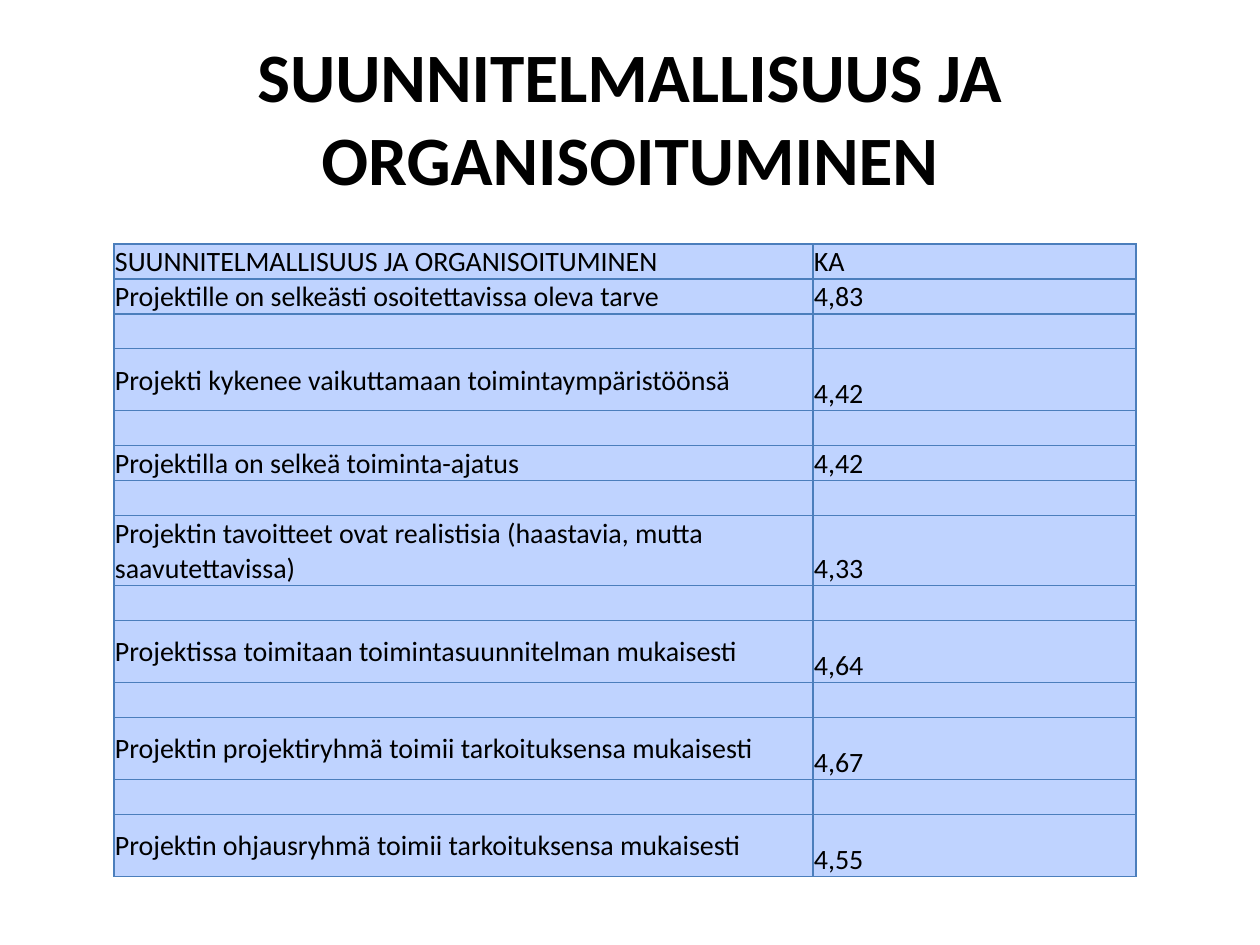
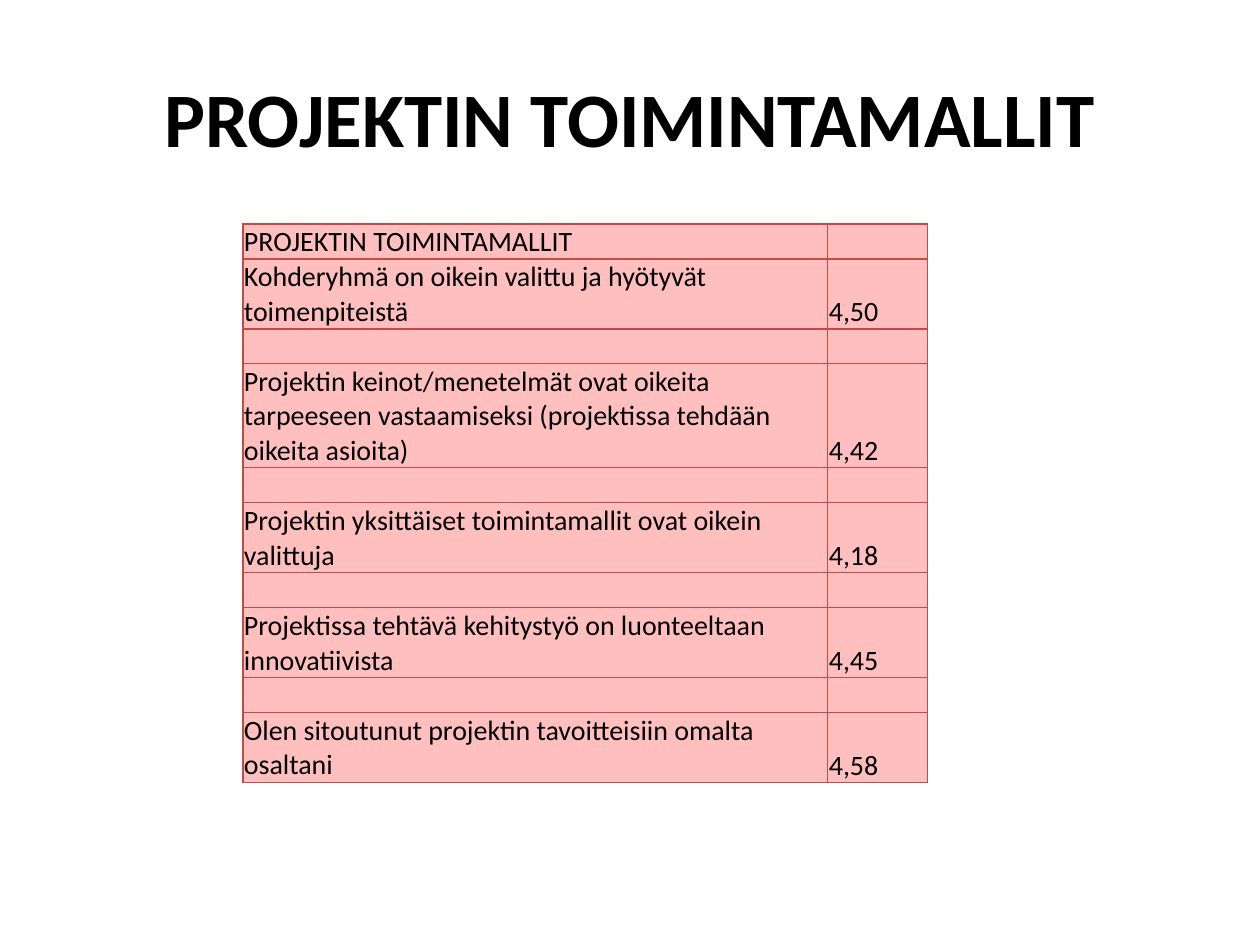
"""Build two slides that list project survey averages in tables."""
import lxml.etree
import pptx
import pptx.dml.color
import pptx.enum.text
import pptx.oxml.ns
import pptx.util

PX = 914400 // 126
FONT = "Calibri"
BODY_SIZE = 16
SHORT, TALL, TWO_LINES, THREE_LINES = 35, 62, 70, 104
COLORS = {
    "text": "000000",
    "blue_fill": "BFD3FF",
    "blue_line": "4B7EBC",
    "red_fill": "FFBFBE",
    "red_line": "BF4C48",
}
ANCHOR = pptx.enum.text.MSO_ANCHOR

PLANNING = [
    ("Projektille on selkeästi osoitettavissa oleva tarve", "4,83", SHORT),
    ("Projekti kykenee vaikuttamaan toimintaympäristöönsä", "4,42", TALL),
    ("Projektilla on selkeä toiminta-ajatus", "4,42", SHORT),
    ("Projektin tavoitteet ovat realistisia (haastavia, mutta saavutettavissa)", "4,33", TWO_LINES),
    ("Projektissa toimitaan toimintasuunnitelman mukaisesti", "4,64", TALL),
    ("Projektin projektiryhmä toimii tarkoituksensa mukaisesti", "4,67", TALL),
    ("Projektin ohjausryhmä toimii tarkoituksensa mukaisesti", "4,55", TALL),
]
METHODS = [
    ("Kohderyhmä on oikein valittu ja hyötyvät toimenpiteistä", "4,50", TWO_LINES),
    ("Projektin keinot/menetelmät ovat oikeita tarpeeseen vastaamiseksi "
     "(projektissa tehdään oikeita asioita)", "4,42", THREE_LINES),
    ("Projektin yksittäiset toimintamallit ovat oikein valittuja", "4,18", TWO_LINES),
    ("Projektissa tehtävä kehitystyö on luonteeltaan innovatiivista", "4,45", TWO_LINES),
    ("Olen sitoutunut projektin tavoitteisiin omalta osaltani", "4,58", TWO_LINES),
]


def px(*lengths):
    """Turn pixel lengths into a list of EMU lengths."""
    return [pptx.util.Emu(length * PX) for length in lengths]


def rgb(name):
    """Return the named colour."""
    return pptx.dml.color.RGBColor.from_string(COLORS[name])


def format_spans(paragraph, size, bold=False):
    """Apply the shared font to every run of a paragraph."""
    for span in paragraph.runs:
        span.font.name = FONT
        span.font.size = pptx.util.Pt(size)
        span.font.bold = bold
        span.font.color.rgb = rgb("text")


def add_title(page, text, size):
    """Add the bold centred title."""
    box = page.shapes.add_textbox(*px(63, 38, 1134, 157))
    frame = box.text_frame
    frame.word_wrap = True
    frame.vertical_anchor = ANCHOR.MIDDLE
    frame.text = text
    paragraph = frame.paragraphs[0]
    paragraph.alignment = pptx.enum.text.PP_ALIGN.CENTER
    format_spans(paragraph, size, bold=True)


def add_borders(cell, color):
    """Draw a thin line on all four sides of a cell."""
    qn = pptx.oxml.ns.qn
    properties = cell._tc.get_or_add_tcPr()
    for position, side in enumerate(("lnL", "lnR", "lnT", "lnB")):
        line = lxml.etree.Element(qn(f"a:{side}"), w=str(pptx.util.Pt(0.75)))
        fill = lxml.etree.SubElement(line, qn("a:solidFill"))
        lxml.etree.SubElement(fill, qn("a:srgbClr"), val=COLORS[color])
        properties.insert(position, line)


def fill_cell(cell, text, anchor, theme):
    """Write and style one table cell."""
    cell.margin_left, cell.margin_right, cell.margin_top, cell.margin_bottom = px(1, 1, 1, 0)
    cell.vertical_anchor = anchor
    cell.fill.solid()
    cell.fill.fore_color.rgb = rgb(f"{theme}_fill")
    add_borders(cell, f"{theme}_line")
    cell.text_frame.text = text
    paragraph = cell.text_frame.paragraphs[0]
    format_spans(paragraph, BODY_SIZE)
    if not text:
        lxml.etree.SubElement(paragraph._p, pptx.oxml.ns.qn("a:endParaRPr"), sz=str(BODY_SIZE * 100))


def add_score_table(page, left, top, widths, header, scores, theme):
    """Add a table with a header and an empty row between the scores."""
    rows = [(*header, SHORT)]
    for score in scores:
        rows += [score, ("", "", SHORT)]
    rows.pop()
    height = sum(row[2] for row in rows)
    table = page.shapes.add_table(len(rows), 2, *px(left, top, sum(widths), height)).table
    table.first_row = table.horz_banding = False
    for column, width in zip(table.columns, px(*widths)):
        column.width = width
    for index, (statement, average, row_height) in enumerate(rows):
        table.rows[index].height = px(row_height)[0]
        fill_cell(table.cell(index, 0), statement, ANCHOR.MIDDLE, theme)
        fill_cell(table.cell(index, 1), average, ANCHOR.BOTTOM, theme)


def main():
    """Build and save the deck."""
    deck = pptx.Presentation()
    deck.slide_width, deck.slide_height = pptx.util.Inches(10), pptx.util.Inches(7.5)
    blank = deck.slide_layouts[6]

    planning_title = "SUUNNITELMALLISUUS JA ORGANISOITUMINEN"
    page = deck.slides.add_slide(blank)
    add_title(page, planning_title, 39.6)
    add_score_table(page, 114, 244, (699, 323), (planning_title, "KA"), PLANNING, "blue")

    methods_title = "PROJEKTIN TOIMINTAMALLIT"
    page = deck.slides.add_slide(blank)
    add_title(page, methods_title, 44)
    add_score_table(page, 243, 224, (585, 100), (methods_title, ""), METHODS, "red")

    deck.save("out.pptx")


if __name__ == "__main__":
    main()
